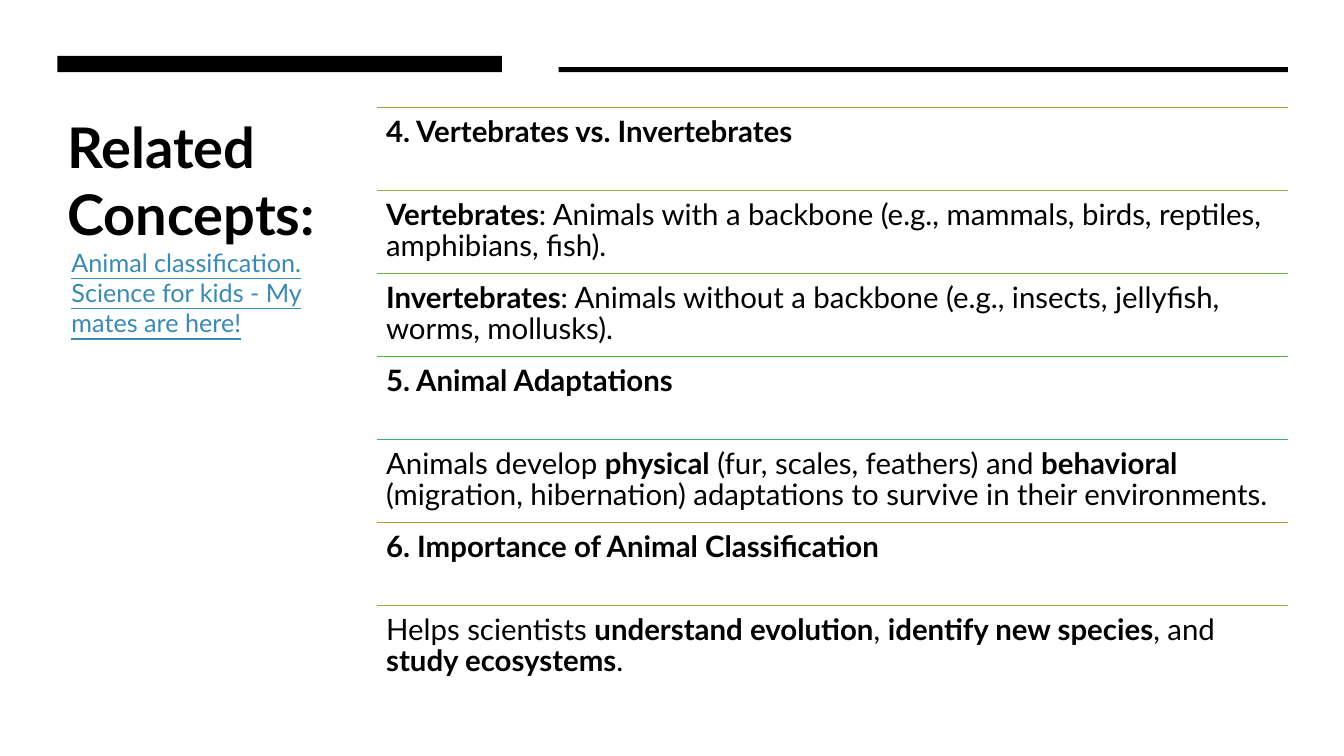
import pptx
import pptx.dml.color
import pptx.enum.shapes
import pptx.oxml.ns
import pptx.util
from lxml import etree

Pt = pptx.util.Pt
RGB = pptx.dml.color.RGBColor
BLACK = RGB(0x00, 0x00, 0x00)
BLUE = RGB(0x3B, 0x8A, 0xB2)
GOLD = RGB(0xB1, 0x94, 0x3B)
OLIVE = RGB(0x9A, 0xAB, 0x43)
LIME = RGB(0x6C, 0xB1, 0x3B)
GREEN = RGB(0x48, 0xB8, 0x48)
JADE = RGB(0x3B, 0xB1, 0x6C)
RULES = [GOLD, OLIVE, LIME, GREEN, JADE]

HEAD = {"name": "Lato", "size": Pt(40), "bold": True}
BODY = {"name": "Lato", "size": Pt(21)}
LINK = {"name": "Lato", "size": Pt(18), "underline": True}

ROWS = [
    "*4. Vertebrates vs. Invertebrates*",
    "*Vertebrates*: Animals with a backbone (e.g., mammals, birds, reptiles, amphibians, fish).",
    "*Invertebrates*: Animals without a backbone (e.g., insects, jellyfish, worms, mollusks).",
    "*5. Animal Adaptations*",
    "Animals develop *physical* (fur, scales, feathers) and *behavioral* "
    "(migration, hibernation) adaptations to survive in their environments.",
    "*6. Importance of Animal Classification*",
    "Helps scientists *understand evolution*, *identify new species*, and *study ecosystems*.",
]


def style(item, form):
    """Set each format value in form on item."""
    for key, value in form.items():
        setattr(item, key, value)


def add_text(slide, box, text, form, color, frame=None, para=None):
    """Place text in box, with the parts between asterisks in bold."""
    area = slide.shapes.add_textbox(*map(Pt, box)).text_frame
    style(area, {"word_wrap": True, **(frame or {})})
    line = area.paragraphs[0]
    style(line, para or {})
    for index, part in enumerate(text.split("*")):
        if part:
            run = line.add_run()
            run.text = part
            style(run.font, {"bold": index % 2 == 1, **form})
            run.font.color.rgb = color


def add_bar(slide, box):
    """Draw a plain black bar that fills box."""
    kind = pptx.enum.shapes.MSO_SHAPE.RECTANGLE
    bar = slide.shapes.add_shape(kind, *map(Pt, box))
    bar.shadow.inherit = False
    bar.fill.solid()
    bar.fill.fore_color.rgb = BLACK
    bar.line.fill.background()


def add_rule(slide, left, top, width, color):
    """Draw a thin level line."""
    kind = pptx.enum.shapes.MSO_CONNECTOR.STRAIGHT
    rule = slide.shapes.add_connector(kind, *map(Pt, (left, top, left + width, top)))
    rule.line.width = Pt(1)
    rule.line.color.rgb = color
    etree.SubElement(rule._element.spPr, pptx.oxml.ns.qn("a:effectLst"))


def add_band(slide, box):
    """Draw the thick and thin bars along the top of the slide."""
    left, top, width, height = box
    add_bar(slide, (left, top, 317.5, height))
    add_bar(slide, (left + 358, top + 8, width - 358, 3.6))


def add_side(slide, box):
    """Place the title and the link text in the left part."""
    left, top, width, height = box
    add_text(slide, box, "Related Concepts:", HEAD, BLACK)
    add_text(slide, (left + 3, top + 95.8, 194.4, 72.7),
             "Animal classification. Science for kids - My mates are here!",
             LINK, BLUE)


def add_list(slide, box):
    """Stack the ruled rows evenly in box."""
    left, top, width, height = box
    step = height / len(ROWS)
    edges = ("left", "top", "right", "bottom")
    frame = {f"margin_{edge}": Pt(6.5) for edge in edges}
    for index, text in enumerate(ROWS):
        place = top + index * step
        add_rule(slide, left, place, width, RULES[index % len(RULES)])
        add_text(slide, (left, place, width, step), text, BODY, BLACK,
                 frame, {"line_spacing": 0.9})


def main():
    """Build the slide and save it."""
    deck = pptx.Presentation()
    style(deck, {"slide_width": Pt(960), "slide_height": Pt(540)})
    slide = deck.slides.add_slide(deck.slide_layouts[6])
    add_side(slide, (41, 77, 317.5, 265))
    add_band(slide, (41, 40, 879, 11.6))
    add_list(slide, (269.3, 77, 650.7, 414.8))
    deck.save("out.pptx")


if __name__ == "__main__":
    main()
